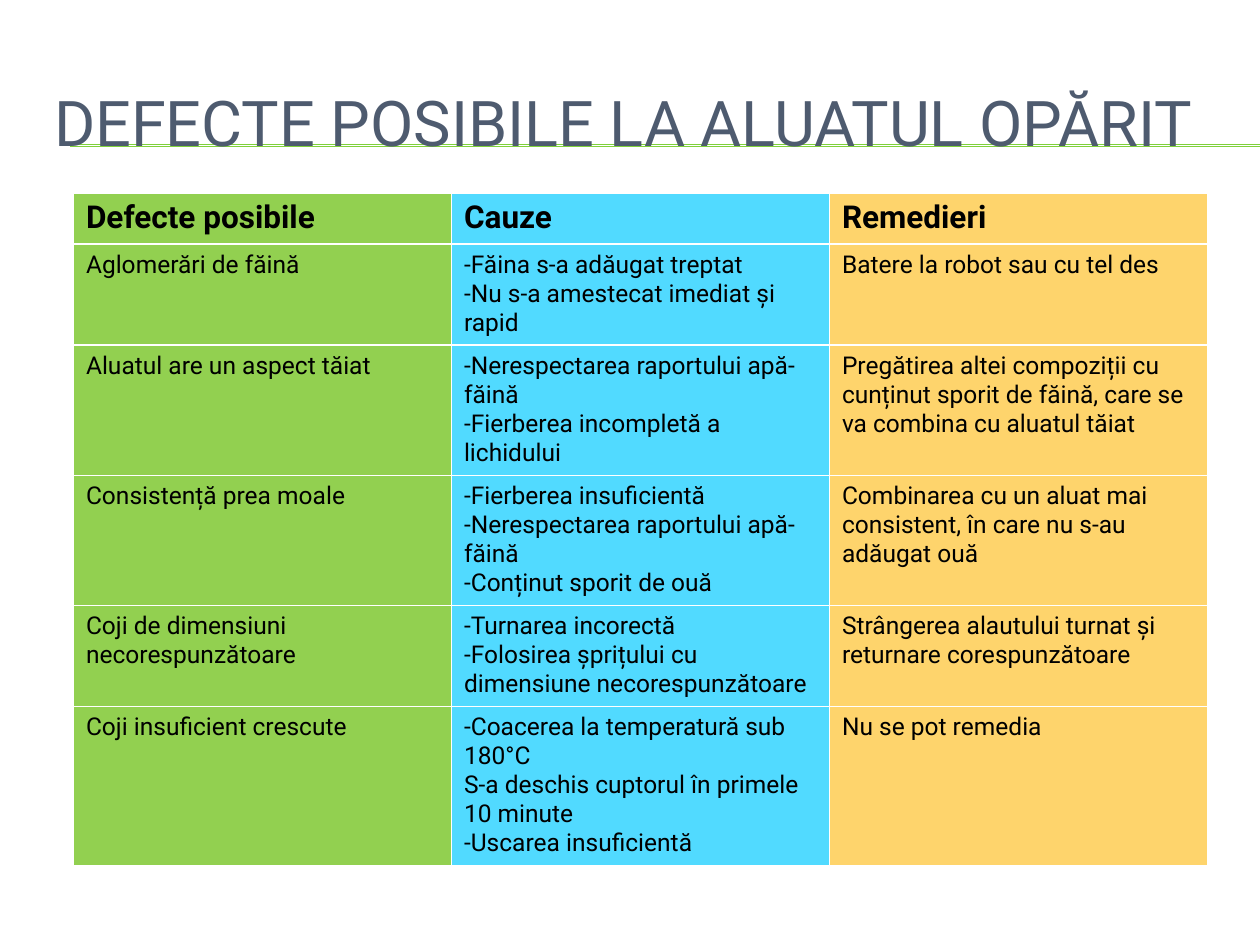
from lxml.etree import SubElement
from pptx import Presentation
from pptx.dml.color import RGBColor
from pptx.enum.shapes import MSO_CONNECTOR
from pptx.enum.text import MSO_ANCHOR
from pptx.oxml.ns import qn
from pptx.util import Cm, Pt

FONT = "Roboto"
SLATE = RGBColor(0x4E, 0x5B, 0x6F)
BLACK = RGBColor(0x00, 0x00, 0x00)
LINE_GREEN = RGBColor(0x7F, 0xD1, 0x3B)
COLUMN_FILLS = [
    RGBColor(0x92, 0xD0, 0x50),
    RGBColor(0x51, 0xDA, 0xFF),
    RGBColor(0xFE, 0xD4, 0x6C),
]

TITLE = "DEFECTE POSIBILE LA ALUATUL OPĂRIT"

# One line in a cell is one paragraph
ROWS = [
    ("Defecte posibile", "Cauze", "Remedieri"),
    ("Aglomerări de făină",
     "-Făina s-a adăugat treptat\n-Nu s-a amestecat imediat și rapid",
     "Batere la robot sau cu tel des"),
    ("Aluatul are un aspect tăiat",
     "-Nerespectarea raportului apă-făină\n-Fierberea incompletă a lichidului",
     "Pregătirea altei compoziții cu cunținut sporit de făină, "
     "care se va combina cu aluatul tăiat"),
    ("Consistență prea moale",
     "-Fierberea insuficientă\n-Nerespectarea raportului apă-făină\n"
     "-Conținut sporit de ouă",
     "Combinarea cu un aluat mai consistent, în care nu s-au adăugat ouă"),
    ("Coji de dimensiuni necorespunzătoare",
     "-Turnarea incorectă\n-Folosirea șprițului cu dimensiune necorespunzătoare",
     "Strângerea alautului turnat și returnare corespunzătoare"),
    ("Coji insuficient crescute",
     "-Coacerea la temperatură sub 180°C\n"
     "S-a deschis cuptorul în primele 10 minute\n-Uscarea insuficientă",
     "Nu se pot remedia"),
]

COLUMN_WIDTH = Cm(7.62)
ROW_HEIGHT = Cm(1.03)


def style_text(text_frame, size, color, bold=False):
    for paragraph in text_frame.paragraphs:
        font = paragraph.font
        font.name, font.size, font.bold = FONT, Pt(size), bold
        font.color.rgb = color


presentation = Presentation()
presentation.slide_width = Cm(25.4)
presentation.slide_height = Cm(19.05)
slide = presentation.slides.add_slide(presentation.slide_layouts[6])

# Double rule behind the title
for y in (Cm(2.92), Cm(2.95)):
    rule = slide.shapes.add_connector(
        MSO_CONNECTOR.STRAIGHT, Cm(1.42), y, presentation.slide_width, y)
    rule.line.color.rgb = LINE_GREEN
    rule.line.width = Pt(0.75)
    SubElement(rule._element.spPr, qn("a:effectLst"))

# Title
title = slide.shapes.add_textbox(Cm(0.84), Cm(1.27), Cm(24.13), Cm(2.34))
title.text_frame.word_wrap = True
title.text_frame.vertical_anchor = MSO_ANCHOR.MIDDLE
title.text_frame.text = TITLE
style_text(title.text_frame, 36, SLATE)

# Table: rows grow to fit their text
columns = len(COLUMN_FILLS)
table = slide.shapes.add_table(
    len(ROWS), columns, Cm(1.48), Cm(3.89),
    COLUMN_WIDTH * columns, ROW_HEIGHT * len(ROWS)).table
for row_index, row in enumerate(ROWS):
    is_header = row_index == 0
    for column_index, text in enumerate(row):
        cell = table.cell(row_index, column_index)
        cell.fill.solid()
        cell.fill.fore_color.rgb = COLUMN_FILLS[column_index]
        cell.text_frame.text = text
        style_text(cell.text_frame, 18 if is_header else 14, BLACK, is_header)

presentation.save("out.pptx")
